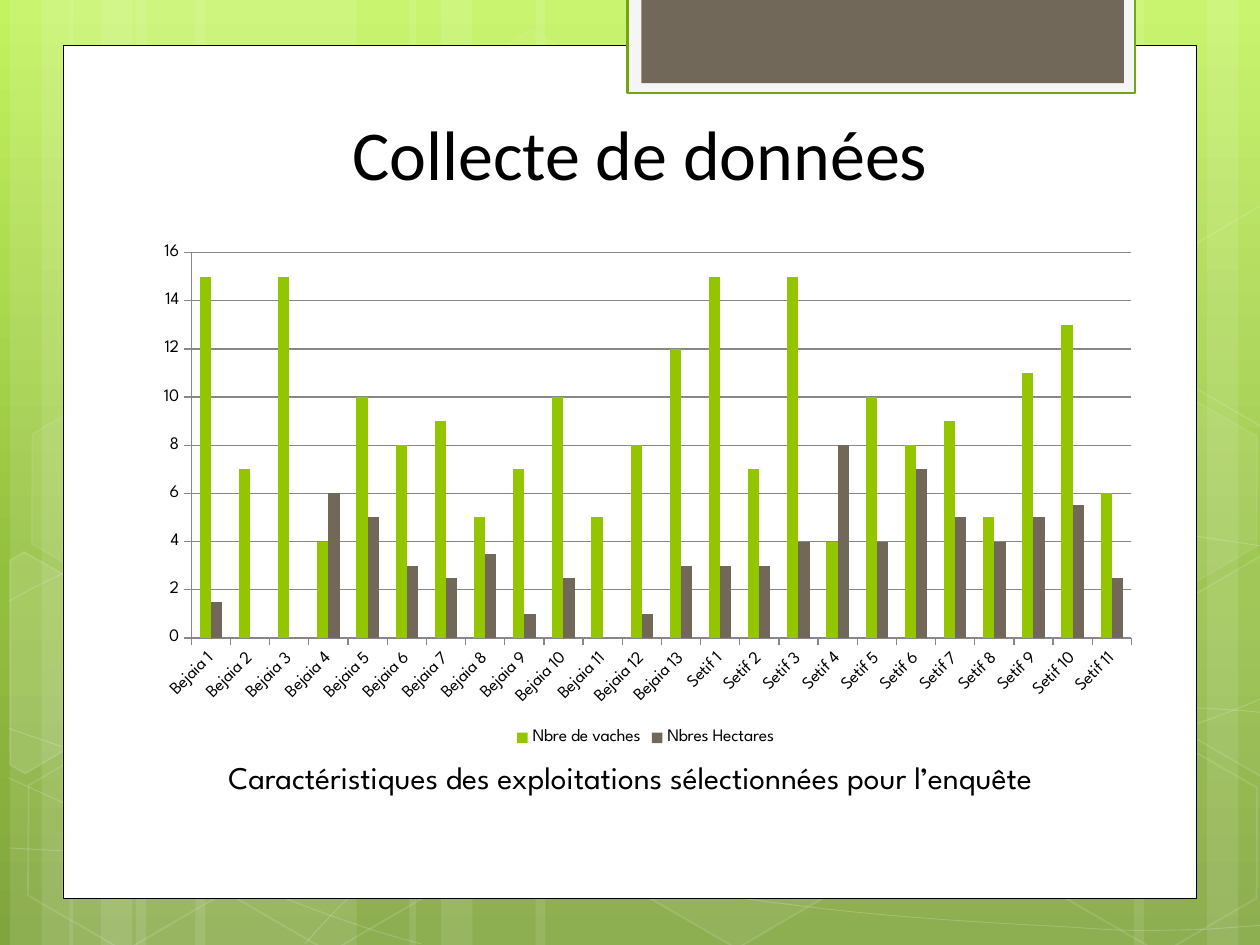
from copy import deepcopy

from lxml.etree import SubElement
from pptx import Presentation
from pptx.chart.data import CategoryChartData
from pptx.dml.color import RGBColor
from pptx.enum.chart import XL_CHART_TYPE, XL_LEGEND_POSITION, XL_TICK_MARK
from pptx.enum.shapes import MSO_SHAPE
from pptx.enum.text import MSO_ANCHOR, PP_ALIGN
from pptx.oxml.ns import qn
from pptx.util import Inches, Pt

WHITE, BLACK = "FFFFFF", "000000"
GREEN, BROWN, GRID = "94C600", "71685A", "878787"
BODY_FONT = "League Spartan"

STRIPES = [(1.08, 1.75), (0.08, 0.5), (0.33, 0.83), (1.55, 1.75), (0.55, 0.5), (0.8, 0.83),
           (7.33, 1.75), (9.58, 0.5), (9, 0.83), (4.25, 3.08), (3.25, 0.5), (3.5, 0.83)]

WAVES = [
    [(0.07, 6.73), (0.61, 6.76), (1.15, 6.79), (1.9, 6.78), (2.65, 6.77), (3.58, 6.75),
     (4.58, 6.65), (5.58, 6.55), (7, 6.36), (7.92, 6.17), (8.83, 5.98), (9.77, 5.68), (10.07, 5.51)],
    [(0.07, 4.77), (0.36, 4.61), (0.65, 4.46), (1.21, 4.31), (1.78, 4.16), (2.59, 3.94),
     (3.47, 3.87), (4.36, 3.8), (5.44, 3.79), (6.54, 3.87), (7.64, 3.95), (9.47, 4.26), (10.07, 4.34)],
    [(0.06, 6.17), (1.27, 6.72), (2.47, 7.27), (3.34, 7.49)],
    [(0.07, 5.78), (0.38, 5.89), (0.7, 6), (1.28, 6.16), (1.86, 6.31), (2.73, 6.56),
     (3.57, 6.73), (4.4, 6.9), (5.45, 7.08), (6.28, 7.18), (7.11, 7.29), (8, 7.33),
     (8.53, 7.36), (9.05, 7.4), (9.19, 7.38), (9.45, 7.38), (9.71, 7.37), (9.89, 7.35), (10.07, 7.34)],
    [(2.42, 7.49), (2.6, 7.29), (2.78, 7.09), (3.02, 6.91), (3.26, 6.73), (3.6, 6.53),
     (3.88, 6.39), (4.16, 6.25), (4.33, 6.19), (4.7, 6.09), (5.06, 5.99), (5.73, 5.85),
     (6.08, 5.78), (6.44, 5.71), (6.49, 5.71), (6.8, 5.69), (7.11, 5.66), (7.6, 5.63),
     (7.94, 5.62), (8.29, 5.61), (8.86, 5.62), (8.86, 5.62), (8.86, 5.62), (9.53, 5.62),
     (9.53, 5.62), (9.71, 5.63), (9.88, 5.64), (9.97, 5.65), (10.06, 5.66), (10.03, 5.65), (10.06, 5.66)],
]

HEXAGONS = [(3.34, 0.36, 4, 8), (4.97, 5.89, 6, 12), (0.11, 5.91, 0, 12), (0.14, 3.12, 7, 8),
            (1.74, 5.92, 0, 12), (8.34, 5.93, 0, 12), (8.34, 3.14, 7, 8)]

CUT_HEXAGONS = [
    ([(0.08, 4.45), (0.19, 4.38), (0.96, 4.82), (0.95, 5.7), (0.2, 6.14), (0.08, 6.07)], 10),
    ([(9.26, 4.85), (10.01, 4.41), (10.09, 4.46), (10.09, 6.13), (10.02, 6.17), (9.26, 5.73)], 4),
    ([(9.26, 2.07), (10.01, 1.63), (10.1, 1.68), (10.09, 3.35), (10.02, 3.39), (9.26, 2.95)], 0),
]

FARMS = [f"Bejaia {n}" for n in range(1, 14)] + [f"Setif {n}" for n in range(1, 12)]
COWS = [15, 7, 15, 4, 10, 8, 9, 5, 7, 10, 5, 8, 12, 15, 7, 15, 4, 10, 8, 9, 5, 11, 13, 6]
HECTARES = [1.5, 0, 0, 6, 5, 3, 2.5, 3.5, 1, 2.5, 0, 1, 3, 3, 3, 4, 8, 4, 7, 5, 4, 5, 5.5, 2.5]


def rgb(hex_color):
    return RGBColor.from_string(hex_color)


def write(frame, text, size=18, font=BODY_FONT, color=BLACK, align=PP_ALIGN.CENTER):
    paragraph = frame.paragraphs[0]
    paragraph.alignment = align
    run = paragraph.add_run()
    run.text = text
    run.font.size = Pt(size)
    run.font.name = font
    run.font.color.rgb = rgb(color)


def paint(fill, holder, color, opacity):
    fill.solid()
    fill.fore_color.rgb = rgb(color)
    if opacity < 100:
        tint = holder.find(qn("a:solidFill")).find(qn("a:srgbClr"))
        SubElement(tint, qn("a:alpha")).set("val", str(opacity * 1000))


def bend(shape):
    segments = list(shape.element.iter(qn("a:lnTo")))
    track = segments[0].getparent()
    for start in range(0, len(segments), 3):
        curve = SubElement(track, qn("a:cubicBezTo"))
        for segment in segments[start:start + 3]:
            curve.append(segment[0])
            track.remove(segment)


class SlideBuilder:
    def __init__(self, slide):
        self.slide = slide
        self.shapes = slide.shapes

    def background(self, stops):
        fill = self.slide.background.fill
        fill.gradient()
        fill.gradient_angle = 270
        stop_list = self.slide.element.find(".//" + qn("a:gsLst"))
        stop_list.append(deepcopy(stop_list[-1]))
        for stop, (position, color) in zip(fill.gradient_stops, stops):
            stop.position = position
            stop.color.rgb = rgb(color)

    def finish(self, shape, fill=None, opacity=100, line=None, width=1, line_opacity=100):
        shape.shadow.inherit = False
        properties = shape.element.spPr
        if fill and opacity:
            paint(shape.fill, properties, fill, opacity)
        else:
            shape.fill.background()
        if line:
            shape.line.width = Pt(width)
            paint(shape.line.fill, properties.find(qn("a:ln")), line, line_opacity)
        else:
            shape.line.fill.background()

    def rectangle(self, *box, **style):
        shape = self.shapes.add_shape(MSO_SHAPE.RECTANGLE, *map(Inches, box))
        self.finish(shape, **style)

    def hexagon(self, left, top, **style):
        shape = self.shapes.add_shape(MSO_SHAPE.HEXAGON, *map(Inches, (left, top, 1.75, 1.52)))
        shape.adjustments[0] = 0.285
        shape.rotation = 30
        self.finish(shape, **style)

    def outline(self, points, close=False, curved=False, **style):
        corners = [(Inches(x), Inches(y)) for x, y in points]
        builder = self.shapes.build_freeform(*corners[0])
        builder.add_line_segments(corners[1:], close=close)
        shape = builder.convert_to_shape()
        if curved:
            bend(shape)
        self.finish(shape, **style)

    def text(self, *box, content, anchor=MSO_ANCHOR.TOP, **style):
        frame = self.shapes.add_textbox(*map(Inches, box)).text_frame
        frame.word_wrap = True
        frame.vertical_anchor = anchor
        write(frame, content, **style)

    def column_chart(self, *box, categories, series):
        data = CategoryChartData()
        data.categories = categories
        for name, values, _ in series:
            data.add_series(name, values)
        chart = self.shapes.add_chart(XL_CHART_TYPE.COLUMN_CLUSTERED, *map(Inches, box), data).chart
        chart.has_title = False
        chart.font.size = Pt(10)
        chart.font.name = BODY_FONT
        chart.font.color.rgb = rgb(BLACK)
        chart.has_legend = True
        chart.legend.position = XL_LEGEND_POSITION.BOTTOM
        chart.legend.include_in_layout = False
        plot = chart.plots[0]
        plot.gap_width = 150
        plot.overlap = 0
        plot.vary_by_categories = False
        for columns, (_, _, color) in zip(plot.series, series):
            columns.format.fill.solid()
            columns.format.fill.fore_color.rgb = rgb(color)
        scale = chart.value_axis
        scale.has_major_gridlines = True
        for axis in (chart.category_axis, scale):
            axis.major_tick_mark = XL_TICK_MARK.OUTSIDE
        for part in (chart.category_axis, scale, scale.major_gridlines):
            part.format.line.width = Pt(0.75)
            part.format.line.color.rgb = rgb(GRID)


def main():
    deck = Presentation()
    deck.slide_width, deck.slide_height = Inches(10), Inches(7.5)
    page = SlideBuilder(deck.slides.add_slide(deck.slide_layouts[6]))

    page.background([(0, "C3F35F"), (0.62, "93BF3F"), (1, "81A53E")])
    for left, width in STRIPES:
        page.rectangle(left, 0, width, 7.5, fill=WHITE, opacity=10)
    for wave in WAVES:
        page.outline(wave, curved=True, line=WHITE, width=0.5, line_opacity=20)
    for left, top, opacity, line_opacity in HEXAGONS:
        page.hexagon(left, top, fill=WHITE, opacity=opacity, line=WHITE, line_opacity=line_opacity)
    for corners, opacity in CUT_HEXAGONS:
        page.outline(corners, close=True, fill=WHITE, opacity=opacity, line=WHITE, line_opacity=12)

    page.rectangle(0.5, 0.36, 9, 6.77, fill=WHITE, line=BLACK, width=0.5)
    page.rectangle(4.98, -0.02, 4.03, 0.76, fill="F5F5F5", line="74A510", width=1.25)
    page.rectangle(5.09, -0.02, 3.83, 0.68, fill=BROWN)

    page.text(1.3, 0.68, 7.68, 0.91, content="Collecte de données ",
              anchor=MSO_ANCHOR.BOTTOM, size=40, font="Calibri")
    page.column_chart(1.14, 1.86, 8, 4.1, categories=FARMS,
                      series=[("Nbre de vaches", COWS, GREEN), ("Nbres Hectares ", HECTARES, BROWN)])
    page.text(1.06, 5.97, 7.95, 0.4,
              content="Caractéristiques des exploitations sélectionnées pour l’enquête ")
    deck.save("out.pptx")


if __name__ == "__main__":
    main()
